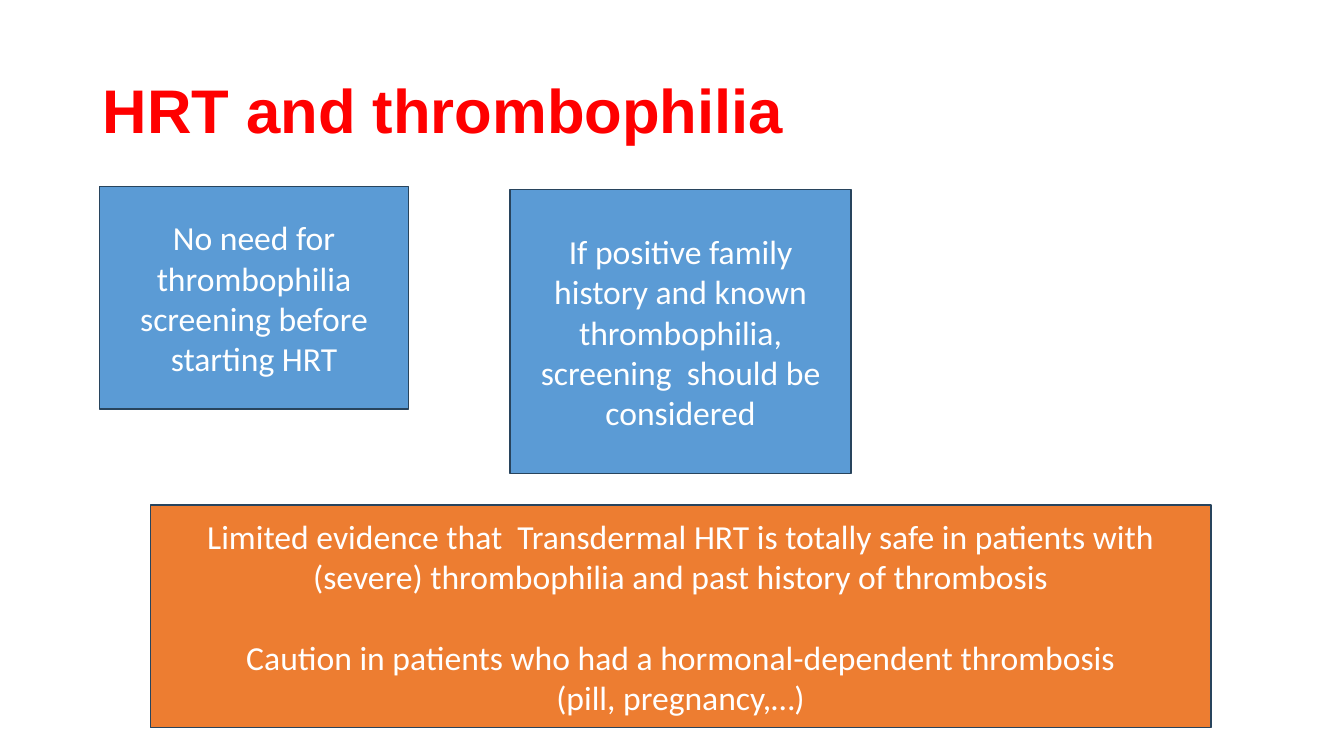
from pptx import Presentation
from pptx.dml.color import RGBColor
from pptx.enum import shapes, text
from pptx.util import Inches, Pt

COLORS = {
    "title": "FF0000",
    "screening": "5B9BD5",
    "caution": "ED7D31",
    "outline": "28445D",
    "statement": "FFFFFF",
}


def rgb(name):
    return RGBColor.from_string(COLORS[name])


def add_styled_run(paragraph, wording, font_name, size, color, bold=False):
    run = paragraph.add_run()
    run.text = wording
    run.font.name = font_name
    run.font.size = Pt(size)
    run.font.bold = bold
    run.font.color.rgb = rgb(color)


def add_title(slide, box, wording):
    title = slide.shapes.add_textbox(*map(Inches, box))
    frame = title.text_frame
    frame.word_wrap = True
    frame.vertical_anchor = text.MSO_ANCHOR.MIDDLE
    heading = frame.paragraphs[0]
    heading.line_spacing = 0.9
    add_styled_run(heading, wording, "Arial", 44, "title", bold=True)


def add_statement(slide, box, fill, statements):
    """Place a filled panel; statements are (wording, space before in points)."""
    panel = slide.shapes.add_shape(shapes.MSO_SHAPE.RECTANGLE, *map(Inches, box))
    panel.shadow.inherit = False
    panel.fill.solid()
    panel.fill.fore_color.rgb = rgb(fill)
    panel.line.color.rgb = rgb("outline")
    panel.line.width = Pt(1)
    frame = panel.text_frame
    frame.word_wrap = True
    frame.vertical_anchor = text.MSO_ANCHOR.MIDDLE
    for index, (wording, space_before) in enumerate(statements):
        paragraph = frame.add_paragraph() if index else frame.paragraphs[0]
        paragraph.alignment = text.PP_ALIGN.CENTER
        if space_before:
            paragraph.space_before = Pt(space_before)
        add_styled_run(paragraph, wording, "Calibri", 24, "statement")


def build_thrombophilia_slide(slide):
    add_title(slide, (0.92, 0.4, 11.5, 1.45), "HRT and thrombophilia")
    add_statement(slide, (0.99, 1.85, 3.06, 2.21), "screening", [
        ("No need for thrombophilia screening before starting HRT", 0),
    ])
    add_statement(slide, (5.06, 1.88, 3.38, 2.82), "screening", [
        ("If positive family history and known thrombophilia, "
         "screening  should be considered", 0),
    ])
    add_statement(slide, (1.49, 5.01, 10.52, 2.21), "caution", [
        ("Limited evidence that  Transdermal HRT is totally safe in patients "
         "with (severe) thrombophilia and past history of thrombosis", 0),
        ("Caution in patients who had a hormonal-dependent thrombosis", 29),
        ("(pill, pregnancy,…)", 0),
    ])


def main():
    deck = Presentation()
    deck.slide_width = Inches(13.33)
    deck.slide_height = Inches(7.5)
    build_thrombophilia_slide(deck.slides.add_slide(deck.slide_layouts[6]))
    deck.save("out.pptx")


if __name__ == "__main__":
    main()
